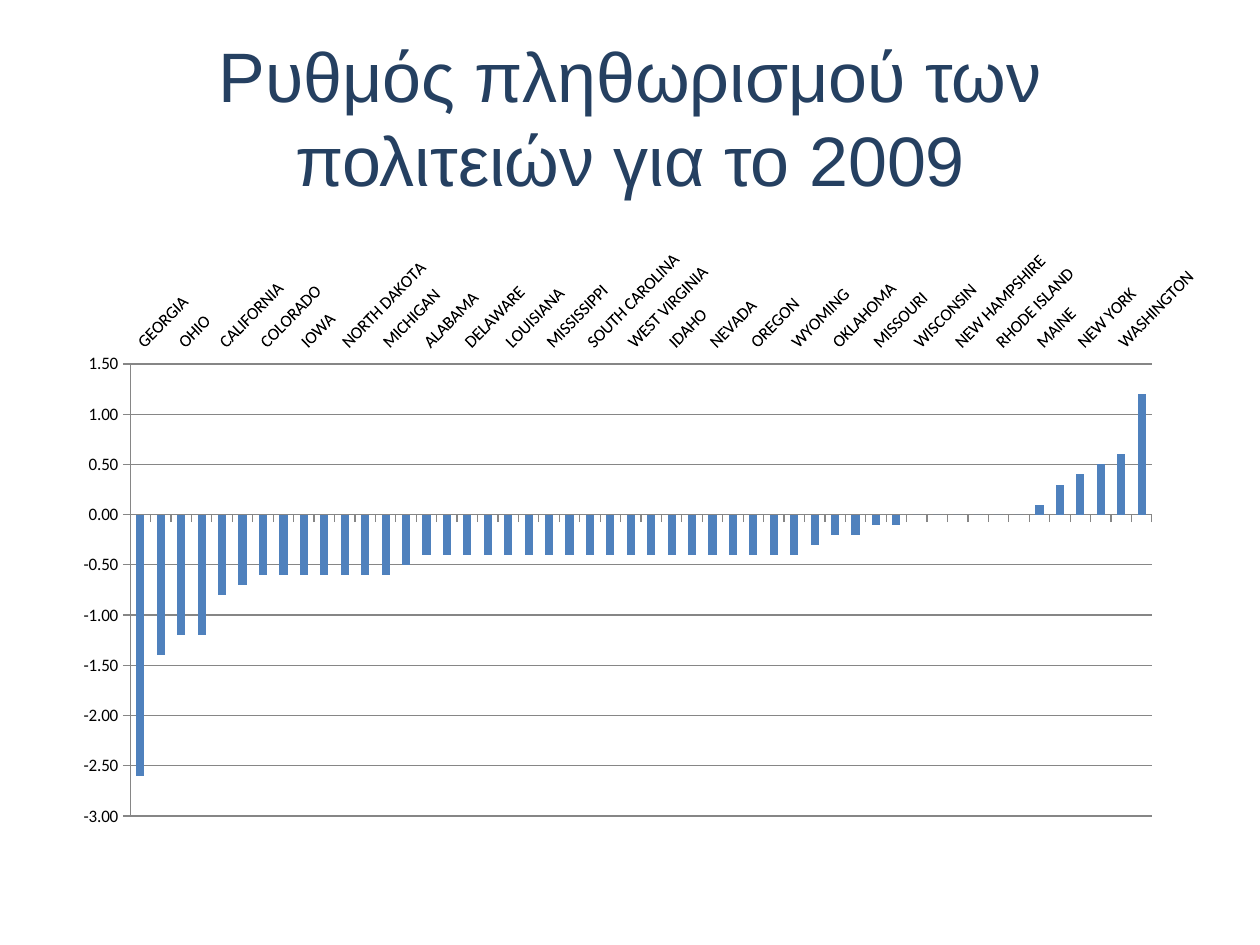
import dataclasses

import lxml.etree
import pptx
import pptx.chart.data
import pptx.dml.color
import pptx.enum.chart
import pptx.enum.text
import pptx.oxml.ns
import pptx.util

Pt = pptx.util.Pt
qn = pptx.oxml.ns.qn

NAVY = pptx.dml.color.RGBColor(0x25, 0x40, 0x61)
BLUE = pptx.dml.color.RGBColor(0x4F, 0x81, 0xBD)
GREY = pptx.dml.color.RGBColor(0x86, 0x86, 0x86)
BLACK = pptx.dml.color.RGBColor(0, 0, 0)


@dataclasses.dataclass(frozen=True)
class Area:
    left: float
    top: float
    width: float
    height: float

    def lengths(self) -> list:
        return [Pt(n) for n in (self.left, self.top, self.width, self.height)]


TITLE_AREA = Area(36, 21.6, 648, 90)
CHART_AREA = Area(36, 126, 648, 356.4)
PLOT_AREA = Area(39.5, 82, 600.5, 258.4)  # measured from the chart's corner

# States ordered by inflation rate, lowest first
STATES = (
    "GEORGIA", "ARIZONA", "OHIO", "ILLINOIS", "CALIFORNIA", "MASSACHUSETTS",
    "COLORADO", "INDIANA", "IOWA", "NEBRASKA", "NORTH DAKOTA", "SOUTH DAKOTA",
    "MICHIGAN", "MINNESOTA", "ALABAMA", "ARKANSAS", "DELAWARE", "KENTUCKY",
    "LOUISIANA", "MARYLAND", "MISSISSIPPI", "NORTH CAROLINA", "SOUTH CAROLINA",
    "VIRGINIA", "WEST VIRGINIA", "PENNSYLVANIA", "IDAHO", "MONTANA", "NEVADA",
    "NEW MEXICO", "OREGON", "UTAH", "WYOMING", "FLORIDA", "OKLAHOMA",
    "TENNESSEE", "MISSOURI", "KANSAS", "WISCONSIN", "CONNECTICUT",
    "NEW HAMPSHIRE", "NEW JERSEY", "RHODE ISLAND", "VERMONT", "MAINE", "TEXAS",
    "NEW YORK", "HAWAII", "WASHINGTON", "ALASKA",
)
RATES = (
    [-2.6, -1.4, -1.2, -1.2, -0.8, -0.7] + [-0.6] * 7 + [-0.5] + [-0.4] * 19
    + [-0.3, -0.2, -0.2, -0.1, -0.1] + [0] * 6 + [0.1, 0.3, 0.4, 0.5, 0.6, 1.2]
)


def fill_title(box, area: Area, text: str) -> None:
    box.left, box.top, box.width, box.height = area.lengths()
    frame = box.text_frame
    frame.word_wrap = True
    frame.vertical_anchor = pptx.enum.text.MSO_ANCHOR.MIDDLE
    para = frame.paragraphs[0]
    para.alignment = pptx.enum.text.PP_ALIGN.CENTER
    span = para.add_run()
    span.text = text
    span.font.name = "Arial"
    span.font.size = Pt(40)
    span.font.color.rgb = NAVY


def style_line(line) -> None:
    line.color.rgb = GREY
    line.width = Pt(0.72)


def style_axis(axis) -> None:
    axis.major_tick_mark = pptx.enum.chart.XL_TICK_MARK.OUTSIDE
    style_line(axis.format.line)


def place_plot(chart, outer: Area, inner: Area) -> None:
    """Fix the inner plot area as shares of the chart area."""
    plot_area = chart.plots[0]._element.getparent()
    for old in plot_area.findall(qn("c:layout")):
        plot_area.remove(old)
    layout = lxml.etree.Element(qn("c:layout"))
    manual = lxml.etree.SubElement(layout, qn("c:manualLayout"))
    settings = {
        "layoutTarget": "inner", "xMode": "edge", "yMode": "edge",
        "x": inner.left / outer.width, "y": inner.top / outer.height,
        "w": inner.width / outer.width, "h": inner.height / outer.height,
    }
    for name, value in settings.items():
        lxml.etree.SubElement(manual, qn("c:" + name)).set("val", str(value))
    plot_area.insert(0, layout)


def add_rate_chart(page, area: Area) -> None:
    data = pptx.chart.data.CategoryChartData(number_format="0.00")
    data.categories = STATES
    data.add_series("Series 1", RATES)
    chart = page.shapes.add_chart(
        pptx.enum.chart.XL_CHART_TYPE.COLUMN_CLUSTERED, *area.lengths(), data
    ).chart
    chart.has_legend = False
    chart.has_title = False
    chart.font.name = "Calibri"
    chart.font.size = Pt(10)
    chart.font.color.rgb = BLACK

    # Columns
    plot = chart.plots[0]
    plot.gap_width = 150
    plot.vary_by_categories = False
    fill = plot.series[0].format.fill
    fill.solid()
    fill.fore_color.rgb = BLUE
    plot.series[0].invert_if_negative = False

    # Rate axis
    rates = chart.value_axis
    style_axis(rates)
    rates.minimum_scale, rates.maximum_scale, rates.major_unit = -3, 1.5, 0.5
    rates.has_major_gridlines = True
    style_line(rates.major_gridlines.format.line)
    rates.tick_labels.number_format = "0.00"
    rates.tick_labels.number_format_is_linked = False

    # State axis, slanted names above the plot
    states = chart.category_axis
    style_axis(states)
    states.tick_label_position = pptx.enum.chart.XL_TICK_LABEL_POSITION.HIGH
    states.tick_labels.font.size = Pt(10)
    states.tick_labels.font.color.rgb = BLACK
    states._element.find(qn("c:txPr")).find(qn("a:bodyPr")).set("rot", "-2700000")

    place_plot(chart, area, PLOT_AREA)


def main() -> None:
    deck = pptx.Presentation()
    deck.slide_width, deck.slide_height = Pt(720), Pt(540)
    page = deck.slides.add_slide(deck.slide_layouts[5])
    fill_title(page.shapes.title, TITLE_AREA,
               "Ρυθμός πληθωρισμού των πολιτειών για το 2009")
    add_rate_chart(page, CHART_AREA)
    deck.save("out.pptx")


if __name__ == "__main__":
    main()
